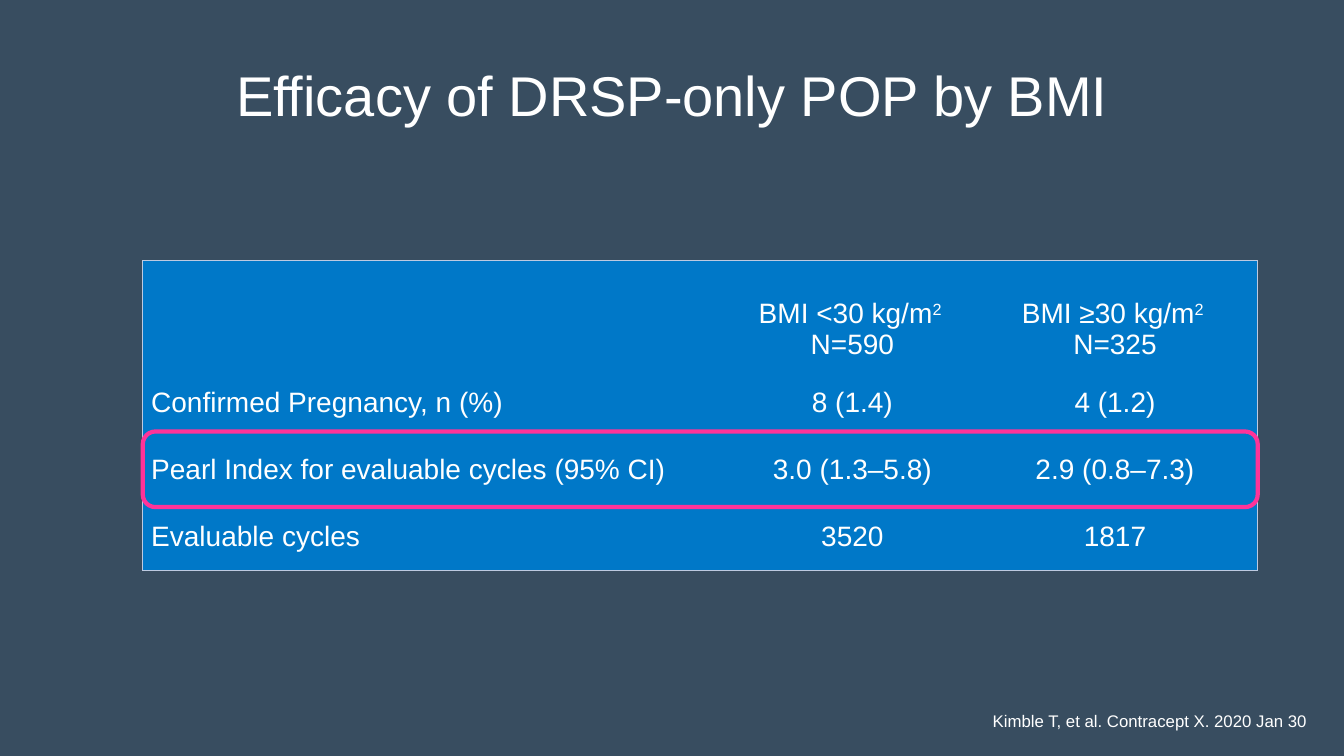
from lxml import etree
from pptx import Presentation
from pptx import util as u
from pptx.dml.color import RGBColor
from pptx.enum import shapes, text
from pptx.oxml import ns

Pt = u.Pt
SLATE = RGBColor(0x38, 0x4D, 0x60)
BLUE = RGBColor(0x00, 0x78, 0xC8)
WHITE = RGBColor(0xFF, 0xFF, 0xFF)
PALE = RGBColor(0xBD, 0xCA, 0xE1)
PINK = RGBColor(0xFF, 0x33, 0x99)
MID = text.PP_ALIGN.CENTER
LEFT = text.PP_ALIGN.LEFT

HEADS = [("BMI <30 kg/m", "N=590"), ("BMI ≥30 kg/m", "N=325")]
ROWS = [
    ("Confirmed Pregnancy, n (%)", "8 (1.4)", "4 (1.2)"),
    ("Pearl Index for evaluable cycles (95% CI)", "3.0 (1.3–5.8)", "2.9 (0.8–7.3)"),
    ("Evaluable cycles", "3520", "1817"),
]


class Deck:
    font = "Arial"

    def __init__(self, wide, high):
        self.prs = Presentation()
        self.prs.slide_width = Pt(wide)
        self.prs.slide_height = Pt(high)
        self.slide = self.prs.slides.add_slide(self.prs.slide_layouts[6])
        fill = self.slide.background.fill
        fill.solid()
        fill.fore_color.rgb = SLATE

    def style(self, frame, size, align):
        for para in frame.paragraphs:
            para.alignment = align
            para.font.size = Pt(size)
            for run in para.runs:
                run.font.name = self.font
                run.font.size = Pt(size)
                run.font.color.rgb = WHITE

    def label(self, box, words, size, align, anchor, gap=None):
        frame = self.slide.shapes.add_textbox(*map(Pt, box)).text_frame
        frame.word_wrap = True
        frame.vertical_anchor = anchor
        frame.text = words
        frame.paragraphs[0].line_spacing = gap
        self.style(frame, size, align)

    def grid(self, left, top, wides, highs):
        frame = self.slide.shapes.add_table(
            len(highs), len(wides), Pt(left), Pt(top), Pt(sum(wides)), Pt(sum(highs)))
        table = frame.table
        for col, wide in zip(table.columns, wides):
            col.width = Pt(wide)
        for row, high in zip(table.rows, highs):
            row.height = Pt(high)
        for y in range(len(highs)):
            for x in range(len(wides)):
                cell = table.cell(y, x)
                cell.fill.solid()
                cell.fill.fore_color.rgb = BLUE
                cell.margin_left = cell.margin_right = Pt(6)
                cell.margin_top = cell.margin_bottom = Pt(6)
                cell.vertical_anchor = text.MSO_ANCHOR.MIDDLE
                self.edge(cell, {"L": x == 0, "R": x == len(wides) - 1,
                                 "T": y == 0, "B": y == len(highs) - 1})
        return table

    def edge(self, cell, sides):
        props = cell._tc.get_or_add_tcPr()
        for spot, (side, shown) in enumerate(sides.items()):
            line = etree.Element(ns.qn("a:ln" + side), w=str(Pt(0.5)))
            props.insert(spot, line)
            if shown:
                fill = etree.SubElement(line, ns.qn("a:solidFill"))
                etree.SubElement(fill, ns.qn("a:srgbClr"), val=str(PALE))
            else:
                etree.SubElement(line, ns.qn("a:noFill"))

    def head(self, cell, title, count):
        cell.vertical_anchor = text.MSO_ANCHOR.BOTTOM
        frame = cell.text_frame
        frame.text = title + "\n" + count
        power = frame.paragraphs[0].add_run()
        power.text = "2 "
        power._r.get_or_add_rPr().set("baseline", "30000")
        self.style(frame, 20, MID)

    def entry(self, cell, words, align):
        cell.text_frame.text = words
        self.style(cell.text_frame, 20, align)

    def ring(self, box):
        shape = self.slide.shapes.add_shape(
            shapes.MSO_SHAPE.ROUNDED_RECTANGLE, *map(Pt, box))
        shape.shadow.inherit = False
        shape.fill.background()
        shape.line.color.rgb = PINK
        shape.line.width = Pt(3)


def main():
    deck = Deck(960, 540)
    deck.label((0, 18, 960, 104.4), "Efficacy of DRSP-only POP by BMI",
               40, MID, text.MSO_ANCHOR.MIDDLE, 0.9)
    table = deck.grid(102, 186, (421.2, 171.4, 203.8), (77.6, 48, 48, 48))
    for x, words in enumerate(HEADS, 1):
        deck.head(table.cell(0, x), *words)
    for y, row in enumerate(ROWS, 1):
        for x, words in enumerate(row):
            deck.entry(table.cell(y, x), words, MID if x else LEFT)
    deck.label((702, 504, 246, 21.8), "Kimble T, et al. Contracept X. 2020 Jan 30",
               12, LEFT, text.MSO_ANCHOR.TOP)
    deck.ring((102, 308.2, 796.4, 54))
    deck.prs.save("out.pptx")


if __name__ == "__main__":
    main()
